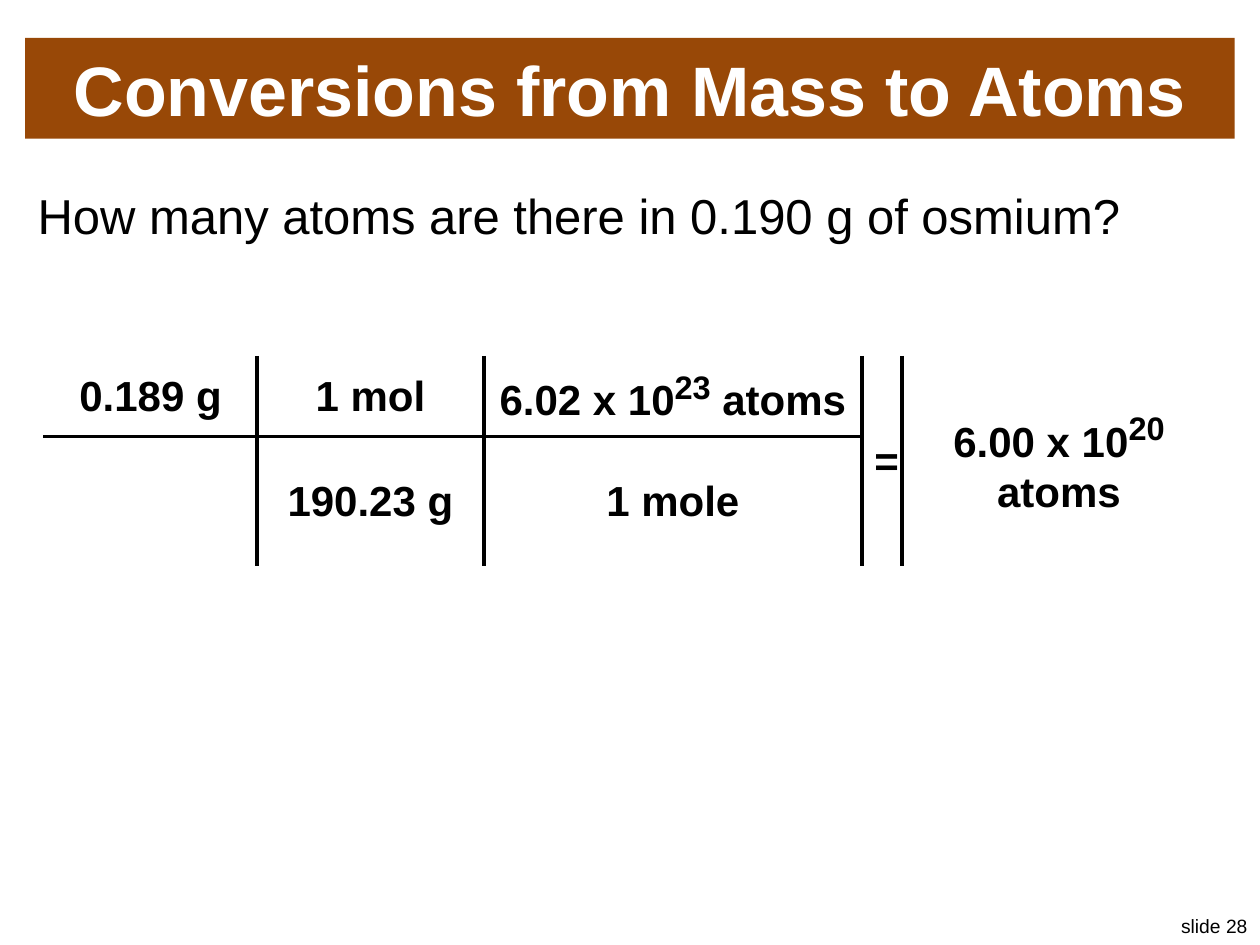
from lxml import etree
from pptx import Presentation
from pptx.dml.color import RGBColor
from pptx.enum import shapes, text
from pptx.oxml.ns import qn
from pptx.util import Inches, Pt

BROWN = RGBColor(0x98, 0x48, 0x07)
WHITE = RGBColor(0xFF, 0xFF, 0xFF)
BLACK = RGBColor(0, 0, 0)
LEFT, CENTER, RIGHT = text.PP_ALIGN.LEFT, text.PP_ALIGN.CENTER, text.PP_ALIGN.RIGHT
MIDDLE, TOP = text.MSO_ANCHOR.MIDDLE, text.MSO_ANCHOR.TOP

# Content: a cell is (text, exponent, text after it)
TITLE = "Conversions from Mass to Atoms"
QUESTION = "How many atoms are there in 0.190 g of osmium?"
FOOTER = "slide 28"
ROWS = [
    [("0.189 g",), ("1 mol",), ("6.02 x 10", "23", " atoms"), ("=",),
     ("6.00 x 10", "20", " atoms")],
    [("",), ("190.23 g",), ("1 mole",), None, None],
]
COLS = [1.69, 1.8, 3, 0.32, 2.49]
HEIGHTS = [0.6, 0.96]
FACTORS = 3  # columns before the equals sign

# Layout
W, H = 10, 7.5
MARGIN = 0.02 * W
BAND = W - 2 * MARGIN


def write(tf, parts, size=24, color=BLACK, bold=False, align=CENTER):
    """Write one paragraph; every second part is an exponent."""
    p = tf.paragraphs[0]
    p.alignment = align
    for i, part in enumerate(parts):
        r = p.add_run()
        r.text = part
        f = r.font
        f.name, f.bold, f.color.rgb = "Arial", bold, color
        f.size = Pt(32 if i % 2 else size)
        if i % 2:
            f._element.set("baseline", "30000")
    return p


def add_text(s, box, parts, wrap=True, **fmt):
    tf = s.shapes.add_textbox(*map(Inches, box)).text_frame
    tf.word_wrap = wrap
    tf.vertical_anchor = TOP
    return write(tf, parts, **fmt)


def rule_sides(cell, sides):
    """Draw black rules on the given sides, in schema order L, R, T, B."""
    tcPr = cell._tc.get_or_add_tcPr()
    for i, side in enumerate(sides):
        ln = etree.Element(qn("a:ln" + side), w=str(Pt(2.25)))
        fill = etree.SubElement(ln, qn("a:solidFill"))
        etree.SubElement(fill, qn("a:srgbClr"), val=str(BLACK))
        tcPr.insert(i, ln)


prs = Presentation()
prs.slide_width, prs.slide_height = Inches(W), Inches(H)
s = prs.slides.add_slide(prs.slide_layouts[6])

# Footer
add_text(s, (9.25, 7.21, 0.75, 0.29), [FOOTER], wrap=False, size=11, align=RIGHT)

# Title band
sp = s.shapes.add_shape(shapes.MSO_SHAPE.RECTANGLE,
                        *map(Inches, (MARGIN, 0.3, BAND, 0.8)))
sp.shadow.inherit = False
sp.fill.solid()
sp.fill.fore_color.rgb = BROWN
sp.line.fill.background()
sp.text_frame.vertical_anchor = MIDDLE
write(sp.text_frame, [TITLE], size=40, color=WHITE, bold=True)

# Question
p = add_text(s, (MARGIN, 1.42, BAND, 1.14), [QUESTION], size=28, align=LEFT)
p.space_before = Pt(12)

# Conversion table
table = s.shapes.add_table(len(ROWS), len(COLS), Inches(0.35), Inches(2.83),
                           Inches(sum(COLS)), Inches(sum(HEIGHTS))).table
table.first_row = table.horz_banding = False
for col, width in zip(table.columns, COLS):
    col.width = Inches(width)
for row, height in zip(table.rows, HEIGHTS):
    row.height = Inches(height)
for c in range(FACTORS, len(COLS)):
    table.cell(0, c).merge(table.cell(1, c))

for r, row in enumerate(ROWS):
    for c, parts in enumerate(row):
        cell = table.cell(r, c)
        cell.fill.background()
        cell.vertical_anchor = MIDDLE
        if parts and parts[0]:
            write(cell.text_frame, parts, bold=True)
        sides = ["L"] if 0 < c <= FACTORS else []
        if c < FACTORS:
            sides += ["R", "B" if r == 0 else "T"]
        rule_sides(cell, sides)

prs.save("out.pptx")
